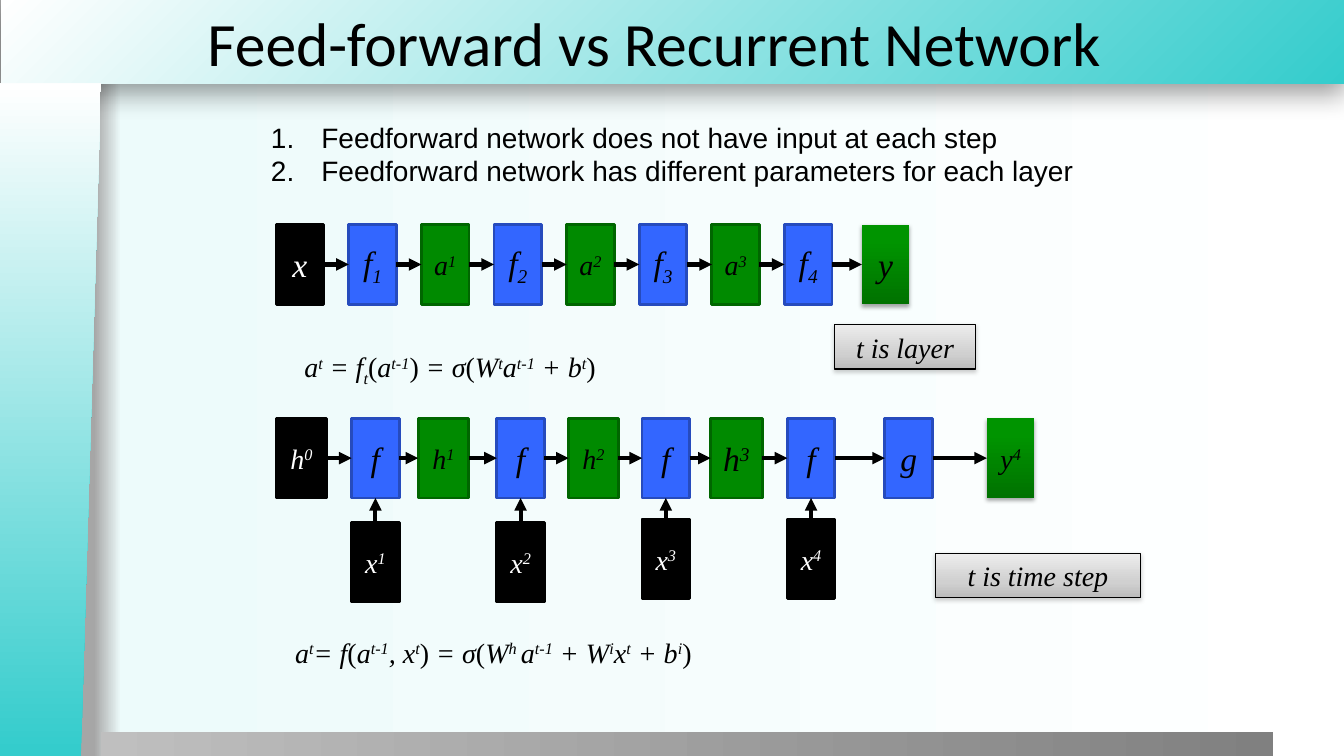
"""Build the slide on feed-forward and recurrent networks."""
from dataclasses import dataclass
from itertools import pairwise
from typing import Any, Optional

from pptx import Presentation
from pptx.dml.color import RGBColor as RGB
from pptx.enum.shapes import MSO_CONNECTOR as LINK, MSO_SHAPE as FORM
from pptx.enum.text import MSO_ANCHOR as ANCHOR, PP_ALIGN as ALIGN
from pptx.oxml import parse_xml
from pptx.oxml.ns import nsdecls, qn
from pptx.util import Cm, Pt

BLACK = RGB(0, 0, 0)
WHITE = RGB(255, 255, 255)
BLUE = RGB(0x33, 0x66, 0xFF)
NAVY = RGB(0x26, 0x4B, 0xBD)
GREEN = RGB(0x00, 0x8A, 0x00)
PINE = RGB(0x00, 0x66, 0x00)
TEAL = RGB(0x34, 0xCC, 0xCC)
GREY = RGB(0x80, 0x80, 0x80)
SILVER = RGB(0xBF, 0xBF, 0xBF)
SERIF = "Times New Roman"

Stops = tuple[tuple[int, RGB], ...]


@dataclass(frozen=True)
class Shade:
    """A gradient, linear at an angle or round a corner."""
    stops: Stops
    angle: int = 0
    corner: bool = False


@dataclass(frozen=True)
class Shadow:
    """A soft shadow that falls straight down."""
    color: RGB
    alpha: int
    blur: float
    drop: float


@dataclass(frozen=True)
class Look:
    """Fill, edge, text colour and shadow of a shape."""
    fill: RGB | Shade
    edge: Optional[RGB] = None
    width: float = 2
    ink: RGB = BLACK
    shadow: Optional[Shadow] = None


@dataclass(frozen=True)
class Node:
    """One box of a network row."""
    text: str
    left: float
    width: float
    look: Look
    size: int = 24


SOFT = Shadow(BLACK, 35, 3.1, 1.8)
HAZE = Shadow(GREY, 38, 3.1, 1.6)
INPUT = Look(BLACK, BLACK, ink=WHITE)
FUNC = Look(BLUE, NAVY)
STATE = Look(GREEN, PINE)
OUTPUT = Look(Shade(((0, RGB(0, 0x72, 0)), (80, RGB(0, 0x94, 0)),
                     (100, RGB(0, 0x95, 0))), 270), shadow=SOFT)
LABEL = Look(Shade(((0, RGB(0xED, 0xED, 0xED)), (65, RGB(0xD0, 0xD0, 0xD0)),
                    (100, RGB(0xBC, 0xBC, 0xBC))), 90), BLACK, 0.75, shadow=HAZE)
BANNER = Look(Shade(((0, TEAL), (100, WHITE)), corner=True),
              shadow=Shadow(BLACK, 40, 20, 6))
SIDE = Look(Shade(((1, TEAL), (100, WHITE))))
FOOTER = Look(Shade(((0, SILVER), (100, GREY))))
PAGE = Shade(((7, RGB(0xA6, 0xA6, 0xA6)), (9, RGB(0xED, 0xFB, 0xFB)), (100, WHITE)))

HIGH = 2.01
STEP = 1.83
START = 6.96
LAYERS = [("x", INPUT, 24), ("f|_1", FUNC, 24), ("a|^1", STATE, 20),
          ("f|_2", FUNC, 24), ("a|^2", STATE, 20), ("f|_3", FUNC, 24),
          ("a|^3", STATE, 20), ("f|_4", FUNC, 24)]
FORWARD = [Node(text, START + i * STEP, 1.2, look, size)
           for i, (text, look, size) in enumerate(LAYERS)]
FORWARD.append(Node("y", 21.72, 1.2, OUTPUT))
LOOP = [Node("h|^0", START, 1.27, INPUT, 20), Node("f", 8.86, 1.2, FUNC),
        Node("h|^1", 10.54, 1.27, STATE, 20), Node("f", 12.52, 1.2, FUNC),
        Node("h|^2", 14.33, 1.25, STATE, 20), Node("f", 16.18, 1.2, FUNC),
        Node("h|^3", 17.91, 1.3, STATE), Node("f", 19.84, 1.2, FUNC),
        Node("g", 22.3, 1.2, FUNC), Node("y|^4", 24.87, 1.2, OUTPUT, 20)]


def paint(item: Any, fill: Any, shade: Shade) -> None:
    """Fill a shape or the slide background with a gradient."""
    fill.gradient()
    old = item.element.find(".//" + qn("a:gradFill"))
    stops = "".join(f'<a:gs pos="{pos * 1000}"><a:srgbClr val="{color}"/></a:gs>'
                    for pos, color in shade.stops)
    way = ('<a:path path="circle"><a:fillToRect l="100000" t="100000"/></a:path>'
           if shade.corner else f'<a:lin ang="{shade.angle * 60000}" scaled="0"/>')
    new = parse_xml(f'<a:gradFill {nsdecls("a")} rotWithShape="1">'
                    f'<a:gsLst>{stops}</a:gsLst>{way}</a:gradFill>')
    old.getparent().replace(old, new)


def cast(shape: Any, shadow: Shadow) -> None:
    """Give a shape its shadow."""
    shape.element.spPr.find(qn("a:effectLst")).append(parse_xml(
        f'<a:outerShdw {nsdecls("a")} blurRad="{Pt(shadow.blur)}" '
        f'dist="{Pt(shadow.drop)}" dir="5400000" rotWithShape="0">'
        f'<a:srgbClr val="{shadow.color}"><a:alpha val="{shadow.alpha * 1000}"/>'
        '</a:srgbClr></a:outerShdw>'))


def write(par: Any, text: str, *, size: int = 20, font: str = SERIF,
          color: RGB = BLACK, italic: bool = True, align: Any = ALIGN.LEFT) -> None:
    """Write runs parted by bars, with ^ for raised and _ for lowered ones."""
    par.alignment = align
    for part in text.split("|"):
        base = {"^": "30000", "_": "-25000"}.get(part[0])
        run = par.add_run()
        run.text = part[1:] if base else part
        run.font.size = Pt(size)
        run.font.name = font
        run.font.color.rgb = color
        run.font.italic = italic and part not in ("(", ")")
        if base:
            run.font._element.set("baseline", base)


def block(slide: Any, look: Look, left: float, top: float, width: float,
          high: float, form: Any = FORM.RECTANGLE) -> Any:
    """Draw a filled shape."""
    shape = slide.shapes.add_shape(form, Cm(left), Cm(top), Cm(width), Cm(high))
    shape.shadow.inherit = False
    if isinstance(look.fill, Shade):
        paint(shape, shape.fill, look.fill)
    else:
        shape.fill.solid()
        shape.fill.fore_color.rgb = look.fill
    if look.edge is None:
        shape.line.fill.background()
    else:
        shape.line.color.rgb = look.edge
        shape.line.width = Pt(look.width)
    if look.shadow:
        cast(shape, look.shadow)
    return shape


def draw(slide: Any, node: Node, top: float, high: float = HIGH) -> Any:
    """Draw a box with centred text."""
    shape = block(slide, node.look, node.left, top, node.width, high)
    shape.text_frame.vertical_anchor = ANCHOR.MIDDLE
    write(shape.text_frame.paragraphs[0], node.text, size=node.size,
          color=node.look.ink, align=ALIGN.CENTER)
    return shape


def arrow(slide: Any, tail: Any, out: int, head: Any, into: int) -> None:
    """Join two boxes with an arrow."""
    link = slide.shapes.add_connector(LINK.STRAIGHT, 0, 0, 0, 0)
    link.begin_connect(tail, out)
    link.end_connect(head, into)
    link.line.color.rgb = BLACK
    link.line.width = Pt(3)
    props = link.element.spPr
    props.find(qn("a:ln")).append(
        parse_xml(f'<a:tailEnd {nsdecls("a")} type="triangle"/>'))
    props.append(parse_xml(f'<a:effectLst {nsdecls("a")}/>'))


def chain(slide: Any, nodes: list[Node], top: float) -> list[Any]:
    """Draw a row of boxes, each joined to the next."""
    row = [draw(slide, node, top) for node in nodes]
    for tail, head in pairwise(row):
        arrow(slide, tail, 3, head, 1)
    return row


def note(slide: Any, left: float, top: float, width: float, high: float,
         wrap: bool = False) -> Any:
    """Add a text box and return its frame."""
    frame = slide.shapes.add_textbox(Cm(left), Cm(top), Cm(width), Cm(high)).text_frame
    frame.word_wrap = wrap
    return frame


def main() -> None:
    """Build and save the slide."""
    deck = Presentation()
    deck.slide_width, deck.slide_height = Cm(33.87), Cm(19.05)
    slide = deck.slides.add_slide(deck.slide_layouts[6])
    paint(slide, slide.background.fill, PAGE)
    block(slide, BANNER, 0.03, 0, 33.84, 2.11)
    side = block(slide, SIDE, -7.21, 9.32, 16.97, 2.54, FORM.FLOWCHART_MANUAL_INPUT)
    side.rotation = 270
    side.element.spPr.find(qn("a:xfrm")).set("flipV", "1")
    block(slide, FOOTER, 2.54, 18.44, 29.54, 0.61)

    title = note(slide, 4.98, 0, 28.89, 2.11, wrap=True)
    title.vertical_anchor = ANCHOR.MIDDLE
    write(title.paragraphs[0], "Feed-forward vs Recurrent Network", size=44,
          font="Calibri", italic=False)

    points = note(slide, 6.58, 2.9, 22.43, 1.96, wrap=True)
    points.add_paragraph()
    for par, text in zip(points.paragraphs, (
            "Feedforward network does not have input at each step",
            "Feedforward network has different parameters for each layer")):
        write(par, text, font="Arial", italic=False)
        props = par._p.get_or_add_pPr()
        props.set("marL", str(Cm(1.27)))
        props.set("indent", str(-Cm(1.27)))
        props.append(parse_xml(f'<a:buAutoNum {nsdecls("a")} type="arabicPeriod"/>'))

    chain(slide, FORWARD, 5.66)
    loop = chain(slide, LOOP, 10.54)
    for i, top in enumerate((13.16, 13.16, 13.08, 13.08)):
        spot = 2 * i + 1
        feed = draw(slide, Node(f"x|^{i + 1}", LOOP[spot].left, 1.2, INPUT, 20), top)
        arrow(slide, feed, 0, loop[spot], 2)

    draw(slide, Node("t is layer", 21.03, 3.56, LABEL, 20), 8.18, 1.12)
    draw(slide, Node("t is time step", 23.57, 5.18, LABEL, 20), 13.94, 1.12)
    write(note(slide, 7.42, 8.69, 8.13, 1.12).paragraphs[0],
          "a|^t| = f|_t|(|a|^t-1|)| = σ|(|W|^t|a|^t-1| + b|^t|)")
    write(note(slide, 7.19, 15.88, 11, 1.12).paragraphs[0],
          "a|^t|= f|(|a|^t-1|, x|^t|)| = σ|(|W|^h |a|^t-1| + W|^i|x|^t| + b|^i|)")
    deck.save("out.pptx")


if __name__ == "__main__":
    main()
